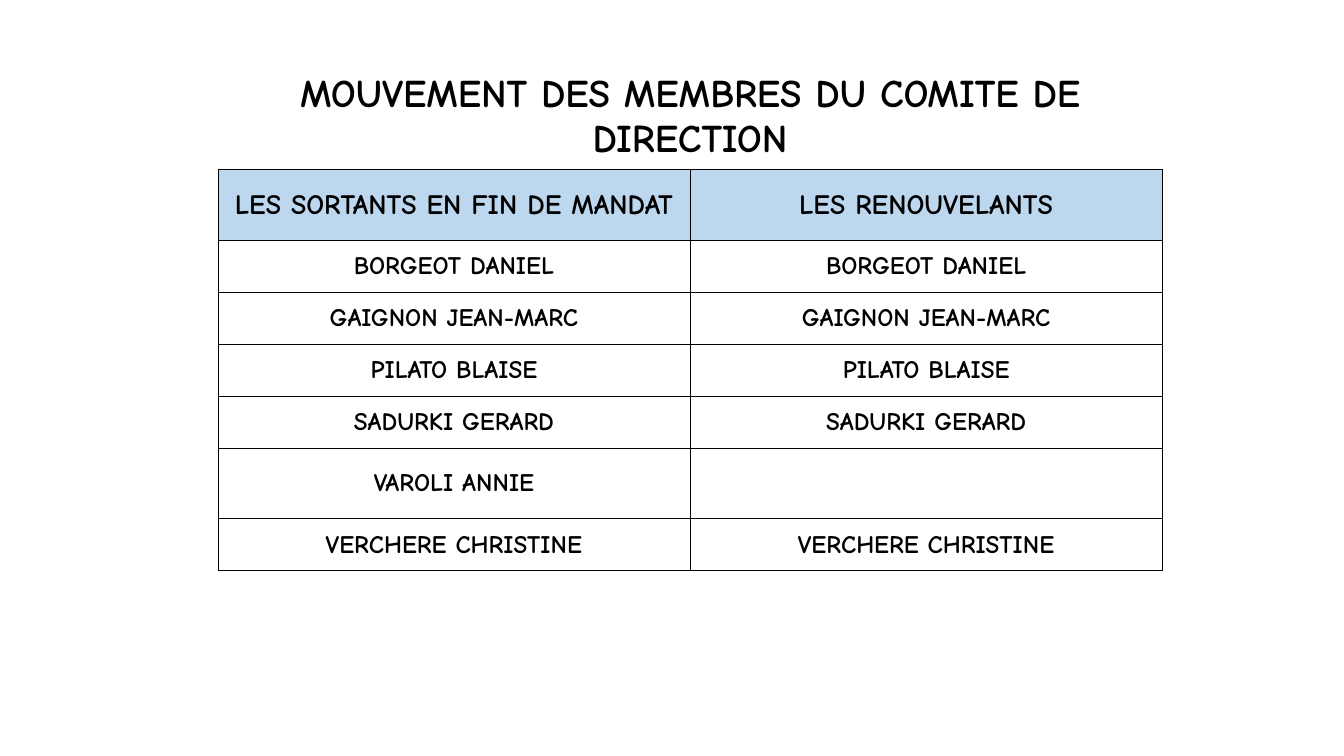
from lxml import etree
from pptx import Presentation
from pptx.dml.color import RGBColor
from pptx.enum.text import MSO_ANCHOR, PP_ALIGN
from pptx.oxml.ns import qn
from pptx.util import Cm, Pt

MIDDLE = MSO_ANCHOR.MIDDLE
CENTER = PP_ALIGN.CENTER

TITLE = "MOUVEMENT DES MEMBRES DU COMITE DE DIRECTION"
HEADINGS = ("LES SORTANTS EN FIN DE MANDAT", "LES RENOUVELANTS")
LEAVING = (
    "BORGEOT DANIEL",
    "GAIGNON JEAN-MARC",
    "PILATO BLAISE",
    "SADURKI GERARD",
    "VAROLI ANNIE",
    "VERCHERE CHRISTINE",
)
NOT_RENEWING = {"VAROLI ANNIE"}

THEME = {
    "font": "Comic Neue",
    "text": RGBColor.from_string("000000"),
    "heading_fill": RGBColor.from_string("BDD7EE"),
    "border": "000000",
    "border_width": Pt(0.5),
    "title_size": Pt(28),
    "heading_size": Pt(20),
    "name_size": Pt(18),
}

TABLE_LEFT, TABLE_TOP = 5.49, 1.63
COLUMN_WIDTH = 11.9
TITLE_HEIGHT, TALL_ROW, NAME_ROW = 2.64, 1.78, 1.31
CELL_FORMAT = {
    "vertical_anchor": MIDDLE,
    "margin_left": Cm(0.02),
    "margin_right": Cm(0.02),
    "margin_top": Cm(0.02),
    "margin_bottom": 0,
}


def set_borders(cell, visible_sides):
    properties = cell._tc.get_or_add_tcPr()
    for side in "LRTB":
        line = etree.SubElement(properties, qn(f"a:ln{side}"), w=str(THEME["border_width"]))
        if side in visible_sides:
            fill = etree.SubElement(line, qn("a:solidFill"))
            etree.SubElement(fill, qn("a:srgbClr"), val=THEME["border"])
        else:
            etree.SubElement(line, qn("a:noFill"))


def write_cell(cell, text, size):
    for name, value in CELL_FORMAT.items():
        setattr(cell, name, value)
    paragraph = cell.text_frame.paragraphs[0]
    paragraph.alignment = CENTER
    font_format = {"name": THEME["font"], "size": size, "bold": True}
    if text:
        run = paragraph.add_run()
        run.text = text
        target = run.font
    else:
        target = paragraph.font
    for name, value in font_format.items():
        setattr(target, name, value)
    target.color.rgb = THEME["text"]


def add_member_table(slide):
    name_rows = [(name, "" if name in NOT_RENEWING else name) for name in LEAVING]
    rows = [(TITLE, ""), HEADINGS, *name_rows]
    heights = [TITLE_HEIGHT, TALL_ROW]
    heights += [TALL_ROW if name in NOT_RENEWING else NAME_ROW for name in LEAVING]
    sizes = [THEME["title_size"], THEME["heading_size"]] + [THEME["name_size"]] * len(LEAVING)

    column_count = len(HEADINGS)
    table = slide.shapes.add_table(
        len(rows), column_count, Cm(TABLE_LEFT), Cm(TABLE_TOP),
        Cm(COLUMN_WIDTH * column_count), Cm(sum(heights)),
    ).table
    table.first_row = False
    table.horz_banding = False
    for column in table.columns:
        column.width = Cm(COLUMN_WIDTH)

    for row_index, (texts, height, size) in enumerate(zip(rows, heights, sizes)):
        table.rows[row_index].height = Cm(height)
        for column_index, text in enumerate(texts):
            cell = table.cell(row_index, column_index)
            set_borders(cell, "B" if row_index == 0 else "LRTB")
            if row_index == 1:
                cell.fill.solid()
                cell.fill.fore_color.rgb = THEME["heading_fill"]
            else:
                cell.fill.background()
            write_cell(cell, text, size)
    table.cell(0, 0).merge(table.cell(0, column_count - 1))


def main():
    presentation = Presentation()
    presentation.slide_width = Cm(33.87)
    presentation.slide_height = Cm(19.05)
    slide = presentation.slides.add_slide(presentation.slide_layouts[6])
    add_member_table(slide)
    presentation.save("out.pptx")


if __name__ == "__main__":
    main()
